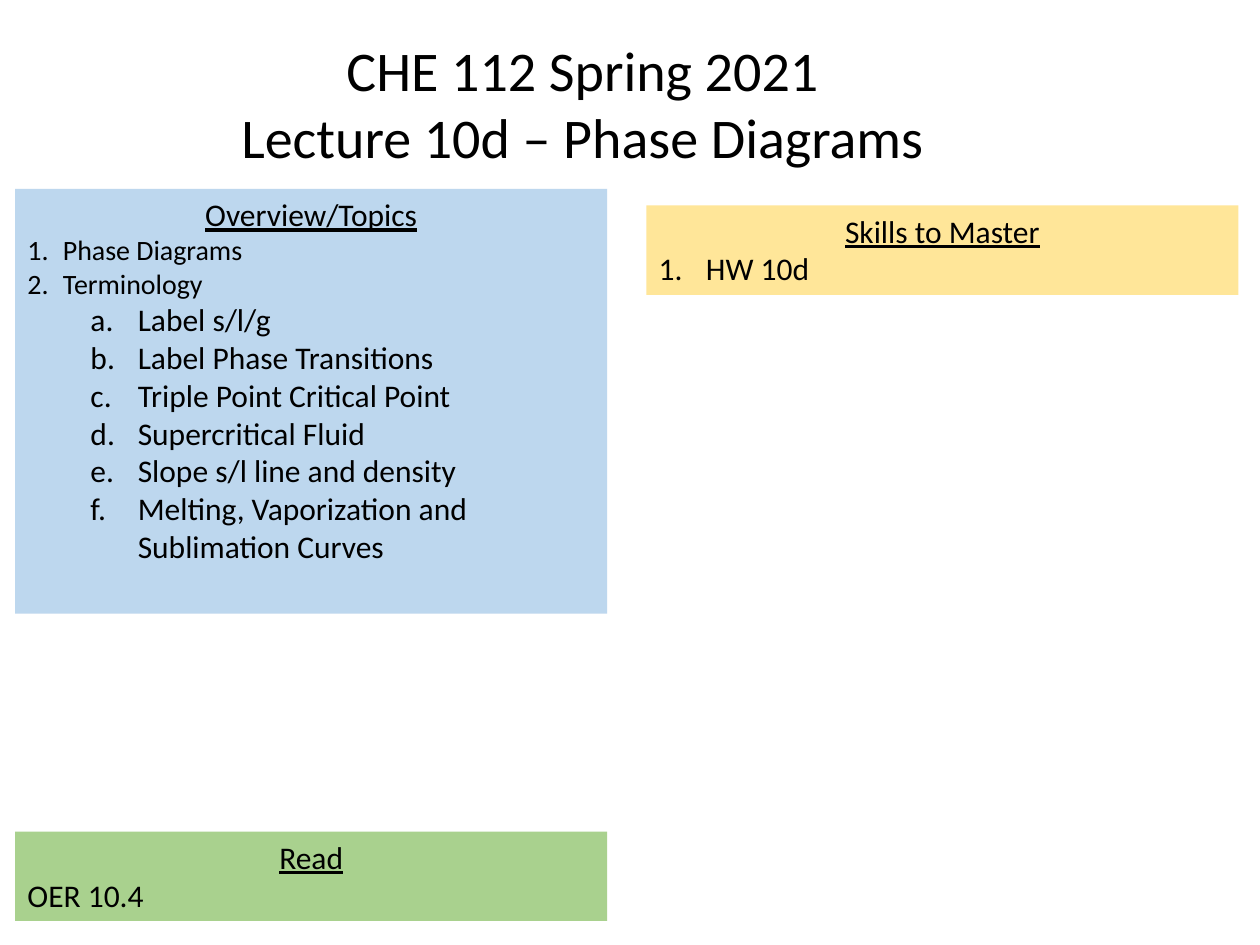
from dataclasses import dataclass
from typing import Optional

import pptx
import pptx.dml.color
import pptx.enum.shapes
import pptx.enum.text
import pptx.oxml
import pptx.oxml.ns
import pptx.util

Pt = pptx.util.Pt
RGBColor = pptx.dml.color.RGBColor
ALIGN = pptx.enum.text.PP_ALIGN

BLACK = RGBColor(0x00, 0x00, 0x00)
BLUE = RGBColor(0xBD, 0xD7, 0xEE)
YELLOW = RGBColor(0xFF, 0xE6, 0x99)
GREEN = RGBColor(0xA9, 0xD1, 0x8E)

PANEL_WIDTH = 338.4
LEFT_COLUMN = 8.64
RIGHT_COLUMN = 369.36


@dataclass(frozen=True)
class Numbering:
    scheme: str
    margin: float
    hanging: float
    level: int = 0


@dataclass(frozen=True)
class Line:
    text: str
    size: float = 18
    underline: bool = False
    centred: bool = False
    numbering: Optional[Numbering] = None


@dataclass(frozen=True)
class Panel:
    left: float
    top: float
    height: float
    fill: RGBColor
    heading: str
    lines: list[Line]


TOPIC = Numbering("arabicPeriod", 20.25, 20.25)
SUBTOPIC = Numbering("alphaLcPeriod", 63, 27, level=1)
SKILL = Numbering("arabicPeriod", 27, 27)

TITLE = ["CHE 112 Spring 2021", "Lecture 10d – Phase Diagrams"]
TOPICS = ["Phase Diagrams", "Terminology"]
SUBTOPICS = [
    "Label s/l/g",
    "Label Phase Transitions",
    "Triple Point Critical Point",
    "Supercritical Fluid",
    "Slope s/l line and density",
    "Melting, Vaporization and Sublimation Curves",
]

PANELS = [
    Panel(LEFT_COLUMN, 108, 242.64, BLUE, "Overview/Topics",
          [Line(t, size=16, numbering=TOPIC) for t in TOPICS]
          + [Line(t, numbering=SUBTOPIC) for t in SUBTOPICS]),
    Panel(RIGHT_COLUMN, 117.36, 51.12, YELLOW, "Skills to Master",
          [Line("HW 10d", numbering=SKILL)]),
    Panel(LEFT_COLUMN, 475.2, 51.12, GREEN, "Read", [Line("OER 10.4")]),
]


def number_paragraph(p, numbering: Numbering) -> None:
    """Give the paragraph a hanging indent and an automatic number."""
    p.level = numbering.level
    pPr = p._p.get_or_add_pPr()
    pPr.set("marL", str(Pt(numbering.margin)))
    pPr.set("indent", str(-Pt(numbering.hanging)))
    bullet = pptx.oxml.parse_xml(
        f'<a:buAutoNum {pptx.oxml.ns.nsdecls("a")} type="{numbering.scheme}"/>')
    pPr.append(bullet)


def write_lines(tf, lines: list[Line]) -> None:
    for i, line in enumerate(lines):
        p = tf.paragraphs[0] if i == 0 else tf.add_paragraph()
        p.alignment = ALIGN.CENTER if line.centred else ALIGN.LEFT
        if line.numbering:
            number_paragraph(p, line.numbering)
        r = p.add_run()
        r.text = line.text
        font_format = {"name": "Calibri", "size": Pt(line.size),
                       "underline": line.underline}
        for name, value in font_format.items():
            setattr(r.font, name, value)
        r.font.color.rgb = BLACK


def draw_panel(s, panel: Panel) -> None:
    sp = s.shapes.add_shape(
        pptx.enum.shapes.MSO_SHAPE.RECTANGLE,
        Pt(panel.left), Pt(panel.top), Pt(PANEL_WIDTH), Pt(panel.height))
    sp.shadow.inherit = False
    sp.fill.solid()
    sp.fill.fore_color.rgb = panel.fill
    sp.line.fill.background()
    tf = sp.text_frame
    frame_format = {"word_wrap": True,
                    "vertical_anchor": pptx.enum.text.MSO_ANCHOR.TOP}
    for name, value in frame_format.items():
        setattr(tf, name, value)
    heading = Line(panel.heading, underline=True, centred=True)
    write_lines(tf, [heading, *panel.lines])


def draw_title(s) -> None:
    sp = s.shapes.add_textbox(Pt(128.88), Pt(16.56), Pt(408.24), Pt(84.96))
    tf = sp.text_frame
    tf.word_wrap = False
    tf.auto_size = pptx.enum.text.MSO_AUTO_SIZE.SHAPE_TO_FIT_TEXT
    write_lines(tf, [Line(t, size=32, centred=True) for t in TITLE])


def main() -> None:
    prs = pptx.Presentation()
    prs.slide_width, prs.slide_height = Pt(720), Pt(540)
    s = prs.slides.add_slide(prs.slide_layouts[6])
    for panel in PANELS:
        draw_panel(s, panel)
    draw_title(s)
    prs.save("out.pptx")


if __name__ == "__main__":
    main()
